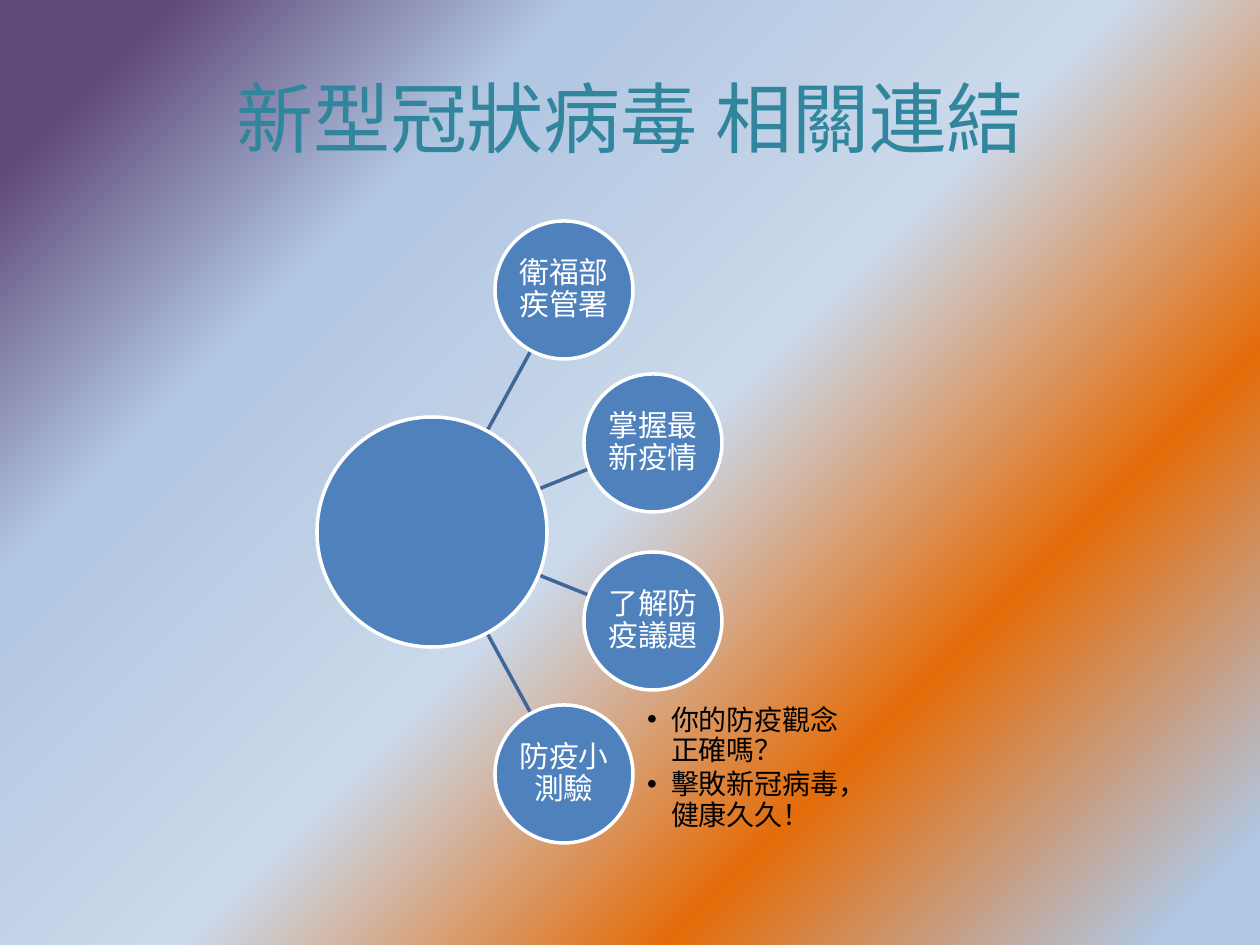
from dataclasses import dataclass
from math import hypot

from lxml.etree import SubElement
from pptx import Presentation
from pptx.dml.color import RGBColor
from pptx.enum.shapes import MSO_CONNECTOR as Connector, MSO_SHAPE as Shape
from pptx.enum.text import MSO_ANCHOR as Anchor, MSO_AUTO_SIZE as AutoSize, PP_ALIGN as Align
from pptx.oxml.ns import qn
from pptx.util import Emu, Pt

EMU_PER_PX = 914400 / 126


def px(length):
    return Emu(round(length * EMU_PER_PX))


@dataclass(frozen=True)
class Theme:
    title_font: str = "Noto Sans CJK SC"
    body_font: str = "Calibri"
    title_size: int = 44
    node_size: int = 17
    list_size: int = 16
    title: str = "31859C"
    node: str = "4F81BD"
    outline: str = "FFFFFF"
    link: str = "3F6797"
    ink: str = "000000"
    line_width: int = 2
    line_spacing: float = 0.9
    background: tuple = ((8, "604A7B"), (26, "B1C6E1"), (51, "CAD9EB"),
                         (73, "E46C0A"), (95, "B0C6E1"))
    background_angle: int = 45


def write(paragraph, text, *, font, size, color, align=None, spacing=None, after=0):
    paragraph.alignment = align
    paragraph.line_spacing = spacing
    paragraph.space_before = Pt(0)
    paragraph.space_after = Pt(after)
    run = paragraph.add_run()
    run.text = text
    run.font.name = font
    run.font.size = Pt(size)
    run.font.color.rgb = RGBColor.from_string(color)


def set_bullet(paragraph, indent):
    properties = paragraph._p.get_or_add_pPr()
    properties.set("marL", str(px(indent)))
    properties.set("indent", str(-px(indent)))
    SubElement(properties, qn("a:buChar"), char="•")


def prepare_frame(frame, margin, anchor):
    frame.margin_left = frame.margin_right = px(margin)
    frame.margin_top = frame.margin_bottom = px(margin)
    frame.word_wrap = True
    frame.auto_size = AutoSize.NONE
    frame.vertical_anchor = anchor


def place(shape, left, top, width, height):
    shape.left, shape.top = px(left), px(top)
    shape.width, shape.height = px(width), px(height)


class SlideBuilder:
    """Holds the theme and the slide being drawn."""

    def __init__(self, slide, theme):
        self.slide = slide
        self.theme = theme

    def background(self):
        fill = self.slide.background.fill
        fill.gradient()
        gradient = self.slide.element.find(".//" + qn("a:gradFill"))
        for child in list(gradient):
            gradient.remove(child)
        stops = SubElement(gradient, qn("a:gsLst"))
        for percent, color in self.theme.background:
            stop = SubElement(stops, qn("a:gs"), pos=str(percent * 1000))
            SubElement(stop, qn("a:srgbClr"), val=color)
        SubElement(gradient, qn("a:lin"), ang=str(self.theme.background_angle * 60000), scaled="0")

    def title(self, text, *box):
        shape = self.slide.shapes.title
        place(shape, *box)
        shape.text_frame.vertical_anchor = Anchor.MIDDLE
        write(shape.text_frame.paragraphs[0], text, font=self.theme.title_font,
              size=self.theme.title_size, color=self.theme.title, align=Align.CENTER)

    def bullets(self, items, *box):
        shape = self.slide.placeholders[1]
        place(shape, *box)
        frame = shape.text_frame
        prepare_frame(frame, 0, Anchor.TOP)
        for index, item in enumerate(items):
            paragraph = frame.add_paragraph() if index else frame.paragraphs[0]
            set_bullet(paragraph, 24)
            write(paragraph, item, font=self.theme.body_font, size=self.theme.list_size,
                  color=self.theme.ink, align=Align.LEFT,
                  spacing=self.theme.line_spacing, after=2.4)

    def circle(self, center, radius, text=None):
        x, y = center
        shape = self.slide.shapes.add_shape(
            Shape.OVAL, px(x - radius), px(y - radius), px(2 * radius), px(2 * radius))
        shape.shadow.inherit = False
        shape.fill.solid()
        shape.fill.fore_color.rgb = RGBColor.from_string(self.theme.node)
        shape.line.color.rgb = RGBColor.from_string(self.theme.outline)
        shape.line.width = Pt(self.theme.line_width)
        if text:
            prepare_frame(shape.text_frame, 1, Anchor.MIDDLE)
            write(shape.text_frame.paragraphs[0], text, font=self.theme.body_font,
                  size=self.theme.node_size, color=self.theme.outline,
                  align=Align.CENTER, spacing=self.theme.line_spacing)

    def link(self, start, start_radius, end, end_radius):
        """Join the rims of two circles along the line between their centers."""
        dx, dy = end[0] - start[0], end[1] - start[1]
        distance = hypot(dx, dy)
        near, far = start_radius / distance, 1 - end_radius / distance
        line = self.slide.shapes.add_connector(
            Connector.STRAIGHT,
            px(start[0] + dx * near), px(start[1] + dy * near),
            px(start[0] + dx * far), px(start[1] + dy * far))
        line.line.color.rgb = RGBColor.from_string(self.theme.link)
        line.line.width = Pt(self.theme.line_width)
        SubElement(line._element.spPr, qn("a:effectLst"))


def main():
    presentation = Presentation()
    presentation.slide_width, presentation.slide_height = px(1260), px(945)
    slide = presentation.slides.add_slide(presentation.slide_layouts[1])
    builder = SlideBuilder(slide, Theme())
    builder.background()
    builder.title("新型冠狀病毒 相關連結", 63, 38, 1134, 158)

    hub, hub_radius, node_radius = (432, 532), 115, 69
    offsets = {
        "衛福部疾管署": (132, -242),
        "掌握最新疫情": (221, -89),
        "了解防疫議題": (221, 89),
        "防疫小測驗": (132, 242),
    }
    nodes = {text: (hub[0] + dx, hub[1] + dy) for text, (dx, dy) in offsets.items()}
    for center in nodes.values():
        builder.link(hub, hub_radius, center, node_radius)
    builder.circle(hub, hub_radius)
    for text, center in nodes.items():
        builder.circle(center, node_radius, text)

    builder.bullets(["你的防疫觀念正確嗎？", "擊敗新冠病毒，健康久久！"], 647, 706, 207, 137)
    presentation.save("out.pptx")


if __name__ == "__main__":
    main()
